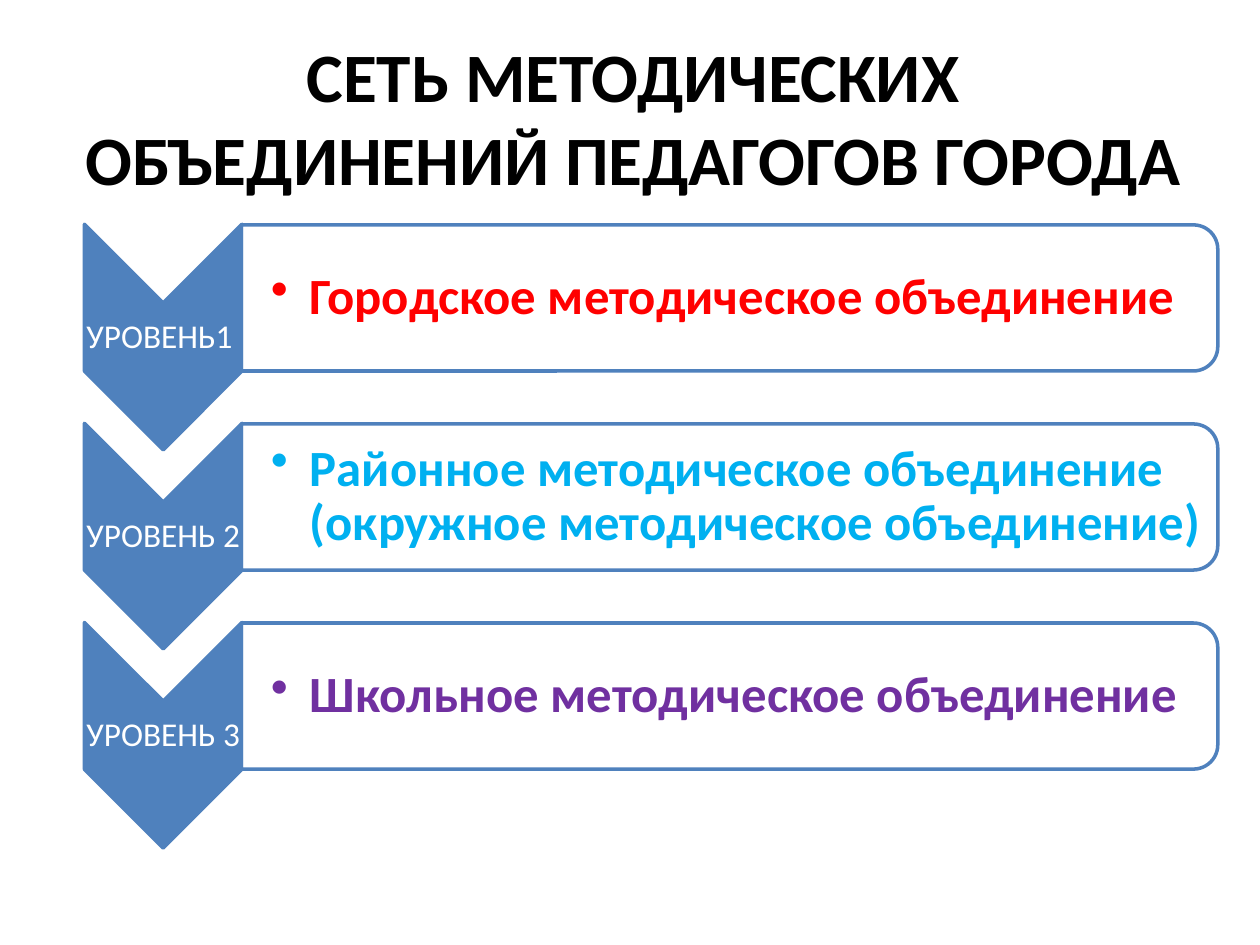
from lxml import etree
from pptx import Presentation
from pptx.dml.color import RGBColor
from pptx.enum import shapes, text
from pptx.oxml import ns
from pptx.util import Inches, Pt

COLORS = {
    "black": "000000",
    "white": "FFFFFF",
    "blue": "4F81BD",
    "red": "FF0000",
    "sky": "00B0F0",
    "violet": "7030A0",
}
LEVELS = [
    ("УРОВЕНЬ1 ", "Городское методическое объединение", "red"),
    ("УРОВЕНЬ 2", "Районное методическое объединение "
     "(окружное методическое объединение)", "sky"),
    ("УРОВЕНЬ 3", "Школьное методическое объединение", "violet"),
]
STEP = 1.58


def rgb(name):
    return RGBColor.from_string(COLORS[name])


def add_turned(items, kind, box, fill):
    """Add a preset shape turned a quarter clockwise; box is its unturned frame."""
    shape = items.add_shape(kind, *map(Inches, box))
    shape.rotation = 90
    shape.shadow.inherit = False
    shape.fill.solid()
    shape.fill.fore_color.rgb = rgb(fill)
    shape.line.color.rgb = rgb("blue")
    shape.line.width = Pt(2)
    return shape


def set_alpha(shape, percent):
    color = shape.fill._xPr.find(".//" + ns.qn("a:srgbClr"))
    etree.SubElement(color, ns.qn("a:alpha"), val=str(percent * 1000))


def add_text(items, box, words, size, color, pads, bold=False, align=None):
    """Add a one-paragraph text box; pads are the left and the other insets."""
    frame = items.add_textbox(*map(Inches, box)).text_frame
    frame.word_wrap = True
    frame.vertical_anchor = text.MSO_ANCHOR.MIDDLE
    left, rest = map(Inches, pads)
    frame.margin_left = left
    frame.margin_right = frame.margin_top = frame.margin_bottom = rest
    para = frame.paragraphs[0]
    para.alignment = align
    run = para.add_run()
    run.text = words
    run.font.size = Pt(size)
    run.font.name = "Calibri"
    run.font.bold = bold
    run.font.color.rgb = rgb(color)
    return para


def add_bullet(para, indent):
    props = para._p.get_or_add_pPr()
    props.set("marL", str(Inches(indent)))
    props.set("indent", str(-Inches(indent)))
    etree.SubElement(props, ns.qn("a:buChar"), char="•")


def add_level(items, drop, label, words, color):
    center = text.PP_ALIGN.CENTER
    add_turned(items, shapes.MSO_SHAPE.CHEVRON,
               (0.4, 2.05 + drop, 1.79, 1.25), "blue")
    para = add_text(items, (0.67, 2.41 + drop, 1.25, 0.54), label, 19,
                    "white", (0.01, 0.01), align=center)
    para.line_spacing = 0.9
    panel = add_turned(items, shapes.MSO_SHAPE.ROUND_2_SAME_RECTANGLE,
                       (5.21, -1.51 + drop, 1.16, 7.75), "white")
    set_alpha(panel, 90)
    para = add_text(items, (1.92, 1.84 + drop, 7.69, 1.05), words, 29,
                    color, (0.23, 0.02), bold=True)
    add_bullet(para, 0.31)
    para.line_spacing = 0.9


def main():
    deck = Presentation()
    deck.slide_width, deck.slide_height = Inches(10), Inches(7.5)
    slide = deck.slides.add_slide(deck.slide_layouts[6])
    add_text(slide.shapes, (0.5, 0.3, 9, 1.25),
             "СЕТЬ МЕТОДИЧЕСКИХ ОБЪЕДИНЕНИЙ ПЕДАГОГОВ ГОРОДА", 39.6,
             "black", (0.1, 0.05), bold=True, align=text.PP_ALIGN.CENTER)
    group = slide.shapes.add_group_shape()
    for row, level in enumerate(LEVELS):
        add_level(group.shapes, row * STEP, *level)
    deck.save("out.pptx")


if __name__ == "__main__":
    main()
